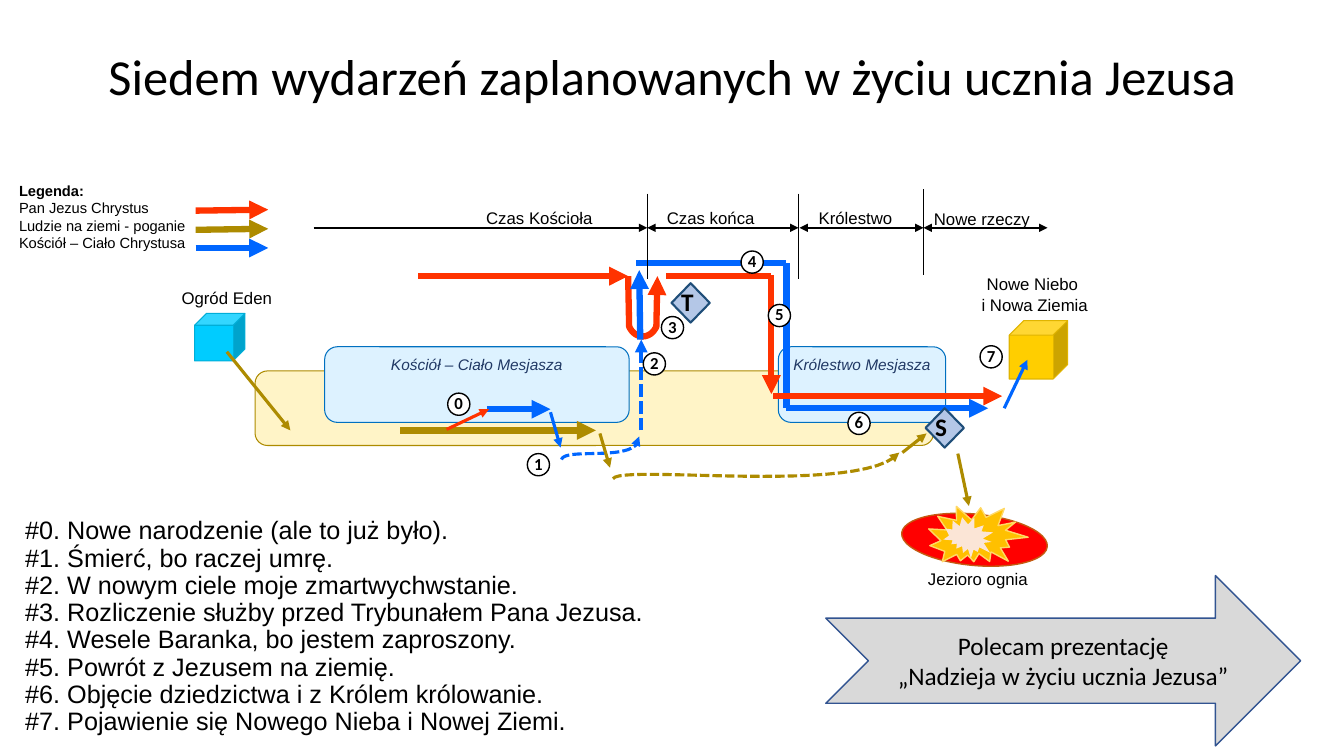
from lxml import etree
from pptx import Presentation
from pptx.dml.color import RGBColor
from pptx.enum.dml import MSO_LINE
from pptx.enum.shapes import MSO_CONNECTOR, MSO_SHAPE
from pptx.enum.text import MSO_ANCHOR, MSO_AUTO_SIZE, PP_ALIGN
from pptx.oxml.ns import qn
from pptx.util import Pt

PX = 9144  # 100 px to the inch
STRAIGHT = MSO_CONNECTOR.STRAIGHT
DASHED = MSO_LINE.SQUARE_DOT
TOP, MIDDLE = MSO_ANCHOR.TOP, MSO_ANCHOR.MIDDLE
LEFT, CENTER = PP_ALIGN.LEFT, PP_ALIGN.CENTER
FIXED_SIZE = MSO_AUTO_SIZE.NONE
ROUNDED, CUBE, DIAMOND = MSO_SHAPE.ROUNDED_RECTANGLE, MSO_SHAPE.CUBE, MSO_SHAPE.DIAMOND
OVAL, LAKE, BURST = MSO_SHAPE.OVAL, MSO_SHAPE.FLOWCHART_CONNECTOR, MSO_SHAPE.EXPLOSION2
NOTCHED_ARROW = MSO_SHAPE.NOTCHED_RIGHT_ARROW

COLORS = {
    "black": "000000", "white": "FFFFFF",
    "jesus": "FF3300", "people": "AD8B00", "church": "0066FF",
    "land": "FFF4C7", "era": "DDF2FF", "era edge": "0070C0", "era text": "203864",
    "eden": "00CCFF", "eden edge": "00AED8", "heaven": "FFCE00", "heaven edge": "E0B400",
    "lake": "FF0000", "lake edge": "C55A11", "flame": "FFC000", "flame edge": "FFD966",
    "flame core": "FBE5D6", "judgement": "B4C7E7", "judgement edge": "1F4E79",
    "callout": "D9D9D9", "callout edge": "325491",
}
RGB = {name: RGBColor.from_string(value) for name, value in COLORS.items()}

prs = Presentation()
prs.slide_width, prs.slide_height = 1333 * PX, 750 * PX
slide = prs.slides.add_slide(prs.slide_layouts[1])
shapes = slide.shapes


def write(shape, text, size, font="Arial", color="black", align=CENTER, anchor=MIDDLE,
          insets=(10, 5), wrap=True, bold=None, italic=None, spacing=None):
    frame = shape.text_frame
    frame.text = text
    frame.word_wrap = wrap
    frame.auto_size = FIXED_SIZE
    frame.vertical_anchor = anchor
    frame.margin_left = frame.margin_right = insets[0] * PX
    frame.margin_top = frame.margin_bottom = insets[1] * PX
    for paragraph in frame.paragraphs:
        paragraph.alignment = align
        paragraph.space_before = Pt(0)
        if spacing:
            paragraph.line_spacing = spacing
        for run in paragraph.runs:
            run.font.name, run.font.size = font, Pt(size)
            run.font.bold, run.font.italic = bold, italic
            run.font.color.rgb = RGB[color]


def stroke(points, color, width, ends="tail", dash=None):
    corners = [(round(x * PX), round(y * PX)) for x, y in points]
    if len(corners) == 2:
        path = shapes.add_connector(STRAIGHT, *corners[0], *corners[1])
    else:
        outline = shapes.build_freeform(*corners[0], scale=1.0)
        outline.add_line_segments(corners[1:], close=False)
        path = outline.convert_to_shape()
        path.fill.background()
    path.line.color.rgb = RGB[color]
    path.line.width = Pt(width)
    if dash:
        path.line.dash_style = dash
    properties = path._element.spPr
    for end in ends.split():
        etree.SubElement(properties.find(qn("a:ln")), qn(f"a:{end}End"), type="triangle")
    etree.SubElement(properties, qn("a:effectLst"))


# Title and list of events
title = shapes.title
title.left, title.top, title.width, title.height = 92 * PX, 40 * PX, 1150 * PX, 78 * PX
write(title, "Siedem wydarzeń zaplanowanych w życiu ucznia Jezusa", 36, "Calibri", spacing=0.9)

events = slide.placeholders[1]
events.left, events.top, events.width, events.height = 15 * PX, 509 * PX, 862 * PX, 223 * PX
write(events, "\n".join([
    "#0. Nowe narodzenie (ale to już było).",
    "#1. Śmierć, bo raczej umrę.",
    "#2. W nowym ciele moje zmartwychwstanie.",
    "#3. Rozliczenie służby przed Trybunałem Pana Jezusa.",
    "#4. Wesele Baranka, bo jestem zaproszony.",
    "#5. Powrót z Jezusem na ziemię.",
    "#6. Objęcie dziedzictwa i z Królem królowanie.",
    "#7. Pojawienie się Nowego Nieba i Nowej Ziemi.",
]), 18, align=LEFT, anchor=TOP, spacing=0.9)
for paragraph in events.text_frame.paragraphs:
    indents = paragraph._p.get_or_add_pPr()
    indents.set("marL", "0")
    indents.set("indent", "0")
    etree.SubElement(indents, qn("a:buNone"))

# Shapes behind the arrows: preset, box, rotation, fill, edge, edge width, text, text format
era_text = dict(size=11, color="era text", anchor=TOP, wrap=False, italic=True)
callout_text = dict(size=18, font="Calibri")
scenery = [
    (ROUNDED, (253, 368, 673, 74), 0, "land", "people", 0.75, "", {}),
    (ROUNDED, (772, 344, 166, 75), 0, "era", "era edge", 0.75, "Królestwo Mesjasza", era_text),
    (ROUNDED, (322, 344, 302, 75), 0, "era", "era edge", 0.75,
     "Kościół – Ciało Mesjasza", era_text),
    (CUBE, (193, 311, 50, 47), 0, "eden", "eden edge", 0.75, "", {}),
    (CUBE, (1001, 318, 58, 58), 0, "heaven", "heaven edge", 0.75, "", {}),
    (LAKE, (894, 510, 145, 51), 5.4, "lake", "lake edge", 1, "", {}),
    (BURST, (921, 498, 97, 68), 16.2, "flame", "flame edge", 1, "", {}),
    (BURST, (938, 511, 47, 45), 56.2, "flame core", None, 0, "", {}),
    (NOTCHED_ARROW, (819, 571, 471, 169), 0, "callout", "callout edge", 1,
     "Polecam prezentację\n„Nadzieja w życiu ucznia Jezusa”", callout_text),
]

# Shapes in front of the arrows: judgements and event numbers
judge_text = dict(size=18, font="Calibri", align=LEFT, insets=(0, 4), bold=True, spacing=0.9)
number_text = dict(size=12, font="Calibri", wrap=False, bold=True, spacing=0.9)
markers = [(DIAMOND, (x, y, 38, 39), 0, "judgement", "judgement edge", 1.5, letter, judge_text)
           for letter, x, y in [("T", 666, 281), ("S", 918, 405)]]
number_places = [(444, 390), (523, 450), (638, 350), (656, 314),
                 (735, 249), (762, 302), (841, 409), (972, 343)]
markers += [(OVAL, (x, y, 22, 22), 0, "white", "black", 1, str(number), number_text)
            for number, (x, y) in enumerate(number_places)]

# Curved paths, sampled from cubic curves
curves = []
for (x0, y0), (x1, y1), (x2, y2), (x3, y3) in [
    ((624, 324), (630, 337), (645, 337), (651, 324)),
    ((557, 456), (560, 443), (635, 460), (634, 433)),
    ((608, 475), (615, 460), (857, 492), (892, 449)),
]:
    curves.append([])
    for step in range(25):
        t = step / 24
        s = 1 - t
        curves[-1].append((s**3 * x0 + 3 * s * s * t * x1 + 3 * s * t * t * x2 + t**3 * x3,
                           s**3 * y0 + 3 * s * s * t * y1 + 3 * s * t * t * y2 + t**3 * y3))
tribunal, death, waiting = curves

for layer in (scenery, markers):
    for preset, box, rotation, fill, edge, edge_width, text, text_format in layer:
        shape = shapes.add_shape(preset, *(length * PX for length in box))
        shape.shadow.inherit = False
        shape.rotation = rotation
        shape.fill.solid()
        shape.fill.fore_color.rgb = RGB[fill]
        if edge:
            shape.line.color.rgb = RGB[edge]
            shape.line.width = Pt(edge_width)
        else:
            shape.line.fill.background()
        if text:
            write(shape, text, **text_format)
    if layer is markers:
        break

    # Thick paths of Jesus, the church and the people
    for color, points, ends in [
        ("people", [(397, 427), (591, 427)], "tail"),
        ("jesus", [(415, 274), (623, 274)], "tail"),
        ("church", [(483, 406), (546, 406)], "tail"),
        ("church", [(631, 261), (780, 261)], ""),
        ("jesus", [(623, 274), *tribunal, (652, 274)], "tail"),
        ("jesus", [(765, 273), (765, 391)], "tail"),
        ("jesus", [(661, 274), (765, 274)], ""),
        ("church", [(780, 261), (780, 405)], ""),
        ("jesus", [(767, 393), (994, 393)], "tail"),
        ("church", [(780, 405), (980, 405)], "tail"),
        ("church", [(635, 337), (634, 268)], "tail"),
        ("church", [(194, 246), (266, 246)], "tail"),
        ("people", [(194, 228), (266, 227)], "tail"),
        ("jesus", [(194, 209), (266, 208)], "tail"),
    ]:
        stroke(points, color, 4.5, ends)

    # Thin and dashed paths
    stroke(death, "church", 2.25, dash=DASHED)
    stroke([(636, 427), (636, 337)], "church", 3, dash=DASHED)
    stroke(waiting, "people", 2.25, dash=DASHED)
    for color, start, end in [
        ("people", (895, 449), (919, 430)), ("people", (595, 430), (605, 464)),
        ("church", (546, 409), (556, 444)), ("people", (950, 450), (961, 502)),
        ("church", (996, 405), (1019, 357)), ("jesus", (443, 426), (485, 406)),
        ("people", (225, 349), (288, 427)),
    ]:
        stroke([start, end], color, 2.25)

    # Time axis
    for start, end, ends in [(311, 642, "tail"), (642, 792, "head tail"),
                             (793, 916, "head tail"), (916, 1039, "head tail")]:
        stroke([(start, 226), (end, 226)], "black", 1.5, ends)
    for x, y in [(642, 192), (792, 192), (916, 188)]:
        stroke([(x, y), (x, y + 85)], "black", 0.5, "")

# Captions
for text, x, y, width, height in [
    ("Czas Kościoła", 463, 203, 144, 26), ("Czas końca", 648, 203, 114, 26),
    ("Królestwo", 802, 203, 93, 26), ("Nowe rzeczy", 916, 204, 116, 26),
    ("Jezioro ognia", 898, 561, 144, 26), ("Ogród Eden", 153, 282, 144, 26),
    ("Nowe Niebo\n i Nowa Ziemia", 952, 269, 144, 46),
]:
    caption = shapes.add_textbox(x * PX, y * PX, width * PX, height * PX)
    write(caption, text, 12, insets=(3, 3))

# Legend
legend = shapes.add_textbox(9 * PX, 175 * PX, 199 * PX, 81 * PX)
write(legend, "Legenda:\nPan Jezus Chrystus\nLudzie na ziemi - poganie\nKościół – Ciało Chrystusa",
      10.5, align=LEFT, anchor=TOP)
legend.text_frame.paragraphs[0].runs[0].font.bold = True

prs.save("out.pptx")
